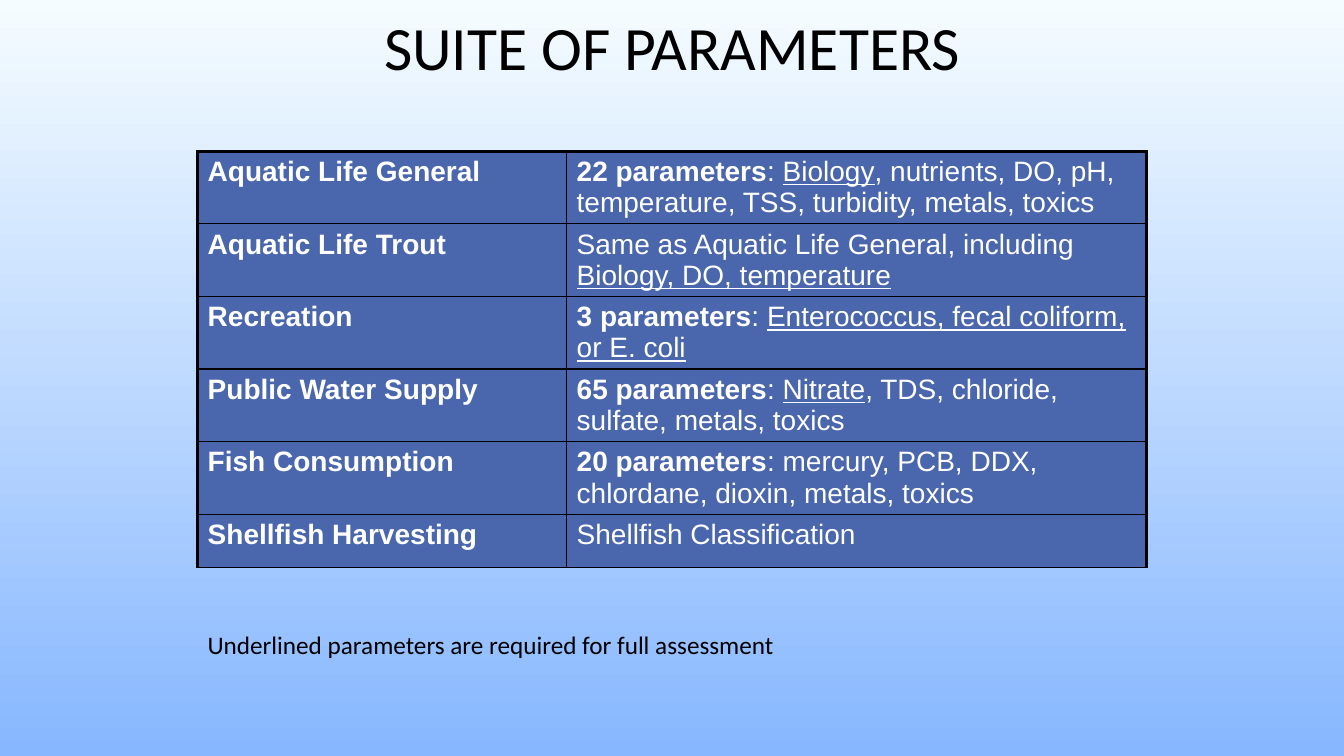
from typing import NamedTuple

from lxml.etree import SubElement
from pptx import Presentation
from pptx.dml.color import RGBColor
from pptx.enum.text import MSO_ANCHOR as Anchor, PP_ALIGN as Align
from pptx.oxml.ns import qn
from pptx.util import Inches, Pt

BLACK = RGBColor(0x00, 0x00, 0x00)
WHITE = RGBColor(0xFF, 0xFF, 0xFF)
BLUE = RGBColor(0x4A, 0x66, 0xAC)
PALE = RGBColor(0xF5, 0xFC, 0xFF)
SKY = RGBColor(0x87, 0xB7, 0xFF)

THIN, THICK = 1, 2.25


class Span(NamedTuple):
    text: str
    bold: bool = False
    under: bool = False


class Use(NamedTuple):
    name: str
    spans: list[Span]
    height: float = 0.72


USES = [
    Use("Aquatic Life General", [
        Span("22 parameters", bold=True), Span(": "), Span("Biology", under=True),
        Span(", nutrients, DO, pH, temperature, TSS, turbidity, metals, toxics")]),
    Use("Aquatic Life Trout", [
        Span("Same as Aquatic Life General, including "),
        Span("Biology, DO, temperature", under=True)]),
    Use("Recreation", [
        Span("3 parameters", bold=True), Span(": "),
        Span("Enterococcus, fecal coliform, or E. coli", under=True)]),
    Use("Public Water Supply", [
        Span("65 parameters", bold=True), Span(": "), Span("Nitrate", under=True),
        Span(", TDS, chloride, sulfate, metals, toxics")]),
    Use("Fish Consumption", [
        Span("20 parameters", bold=True),
        Span(": mercury, PCB, DDX, chlordane, dioxin, metals, toxics")]),
    Use("Shellfish Harvesting", [Span("Shellfish Classification")], 0.53),
]
COLS = [3.66, 5.75]


def style(font, name: str, size: float, color: RGBColor) -> None:
    font.name, font.size = name, Pt(size)
    font.color.rgb = color


def border(cell, side: str, width: float) -> None:
    line = SubElement(cell._tc.get_or_add_tcPr(), qn(f"a:ln{side}"), w=str(Pt(width)))
    fill = SubElement(line, qn("a:solidFill"))
    SubElement(fill, qn("a:srgbClr"), val=str(BLACK))


def fill_cell(cell, spans: list[Span], edges: dict[str, float]) -> None:
    """Write the spans as runs; borders must precede the fill in the XML."""
    for side, width in edges.items():
        border(cell, side, width)
    cell.fill.solid()
    cell.fill.fore_color.rgb = BLUE
    para = cell.text_frame.paragraphs[0]
    for span in spans:
        run = para.add_run()
        run.text = span.text
        style(run.font, "Arial", 20, WHITE)
        run.font.bold, run.font.underline = span.bold, span.under


def add_title(slide) -> None:
    title = slide.shapes.title
    title.left, title.top = Inches(1.67), Inches(0.12)
    title.width, title.height = Inches(10), Inches(1.08)
    frame = title.text_frame
    frame.text = "SUITE OF PARAMETERS"
    frame.vertical_anchor = Anchor.TOP
    para = frame.paragraphs[0]
    para.alignment, para.line_spacing = Align.CENTER, 0.9
    style(para.runs[0].font, "Calibri", 44, BLACK)


def add_uses(slide) -> None:
    high = sum(use.height for use in USES)
    table = slide.shapes.add_table(
        len(USES), len(COLS), Inches(1.96), Inches(1.5),
        Inches(sum(COLS)), Inches(high)).table
    table.first_row = table.horz_banding = False
    for col, width in zip(table.columns, COLS):
        col.width = Inches(width)
    for row, use in enumerate(USES):
        table.rows[row].height = Inches(use.height)
        top = THIN if row else THICK
        fill_cell(table.cell(row, 0), [Span(use.name, bold=True)],
                  {"L": THICK, "R": THIN, "T": top, "B": THIN})
        fill_cell(table.cell(row, 1), use.spans,
                  {"L": THIN, "R": THICK, "T": top, "B": THIN})


def add_note(slide) -> None:
    note = slide.shapes.add_textbox(
        Inches(1.96), Inches(6.19), Inches(5.92), Inches(0.4))
    frame = note.text_frame
    frame.text = "Underlined parameters are required for full assessment"
    frame.word_wrap = False
    style(frame.paragraphs[0].runs[0].font, "Calibri", 18, BLACK)


def main() -> None:
    deck = Presentation()
    deck.slide_width, deck.slide_height = Inches(13.33), Inches(7.5)
    slide = deck.slides.add_slide(deck.slide_layouts[5])
    back = slide.background.fill
    back.gradient()
    back.gradient_angle = 270
    for stop, color in zip(back.gradient_stops, (PALE, SKY)):
        stop.color.rgb = color
    add_title(slide)
    add_uses(slide)
    add_note(slide)
    deck.save("out.pptx")


if __name__ == "__main__":
    main()
